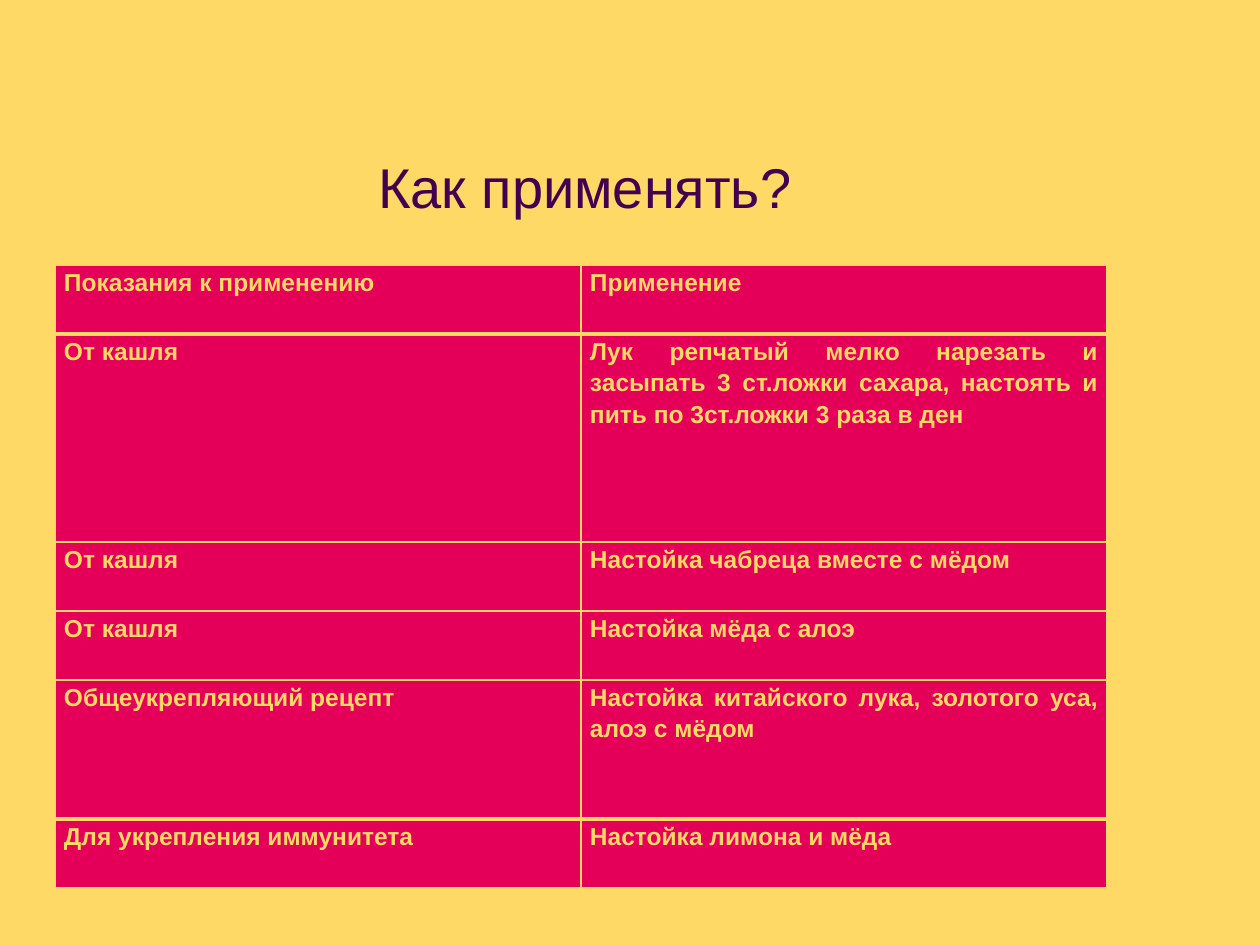
from lxml import etree
from pptx import Presentation
from pptx.dml.color import RGBColor
from pptx.enum.text import MSO_ANCHOR, PP_ALIGN
from pptx.oxml.ns import qn
from pptx.util import Pt

EMU_PER_PX = 914400 / 126
CENTER, JUSTIFY = PP_ALIGN.CENTER, PP_ALIGN.JUSTIFY
MIDDLE = MSO_ANCHOR.MIDDLE
YELLOW, CRIMSON, PURPLE = "FFD965", "E40059", "420051"
color = RGBColor.from_string


def px(length):
    return round(length * EMU_PER_PX)


def write(frame, text, size, fill, align, bold=False, spacing=1.0):
    frame.text = text
    paragraph = frame.paragraphs[0]
    paragraph.alignment = align
    paragraph.line_spacing = spacing
    font = paragraph.runs[0].font
    font.name, font.size, font.bold = "Arial", Pt(size), bold
    font.color.rgb = color(fill)


presentation = Presentation()
presentation.slide_width, presentation.slide_height = px(1260), px(945)
slide = presentation.slides.add_slide(presentation.slide_layouts[5])
slide.background.fill.solid()
slide.background.fill.fore_color.rgb = color(YELLOW)

title = slide.shapes.title
title.left, title.top, title.width, title.height = px(78), px(137), px(1014), px(98)
title.text_frame.vertical_anchor = MIDDLE
write(title.text_frame, "Как применять?", 32, PURPLE, CENTER)

rows = [
    (69, "Показания к применению", "Применение"),
    (208, "От кашля", "Лук репчатый мелко нарезать и засыпать 3 ст.ложки сахара, "
                      "настоять и пить по 3ст.ложки 3 раза в ден"),
    (69, "От кашля", "Настойка чабреца вместе с мёдом"),
    (69, "От кашля", "Настойка мёда с алоэ"),
    (139, "Общеукрепляющий рецепт", "Настойка китайского лука, золотого уса, алоэ с мёдом"),
    (69, "Для укрепления иммунитета", "Настойка лимона и мёда"),
]
thick_edges = {1, len(rows) - 1}
total_height = sum(row[0] for row in rows)
table = slide.shapes.add_table(len(rows), 2, px(55), px(265), px(1052), px(total_height)).table
for column in table.columns:
    column.width = px(526)

for row_index, (height, *texts) in enumerate(rows):
    table.rows[row_index].height = px(height)
    for column_index, text in enumerate(texts):
        cell = table.cell(row_index, column_index)
        cell.margin_left = cell.margin_right = px(9)
        cell.margin_top = cell.margin_bottom = 0
        write(cell.text_frame, text, 14, YELLOW, JUSTIFY, bold=True, spacing=1.15)
        cell.fill.solid()
        cell.fill.fore_color.rgb = color(CRIMSON)
        properties = cell._tc.get_or_add_tcPr()
        widths = {
            "a:lnL": 1,
            "a:lnR": 1,
            "a:lnT": 3 if row_index in thick_edges else 1,
            "a:lnB": 3 if row_index + 1 in thick_edges else 1,
        }
        for position, (side, width) in enumerate(widths.items()):
            border = etree.Element(qn(side), w=str(Pt(width)))
            border_fill = etree.SubElement(border, qn("a:solidFill"))
            etree.SubElement(border_fill, qn("a:srgbClr"), val=YELLOW)
            properties.insert(position, border)

presentation.save("out.pptx")
